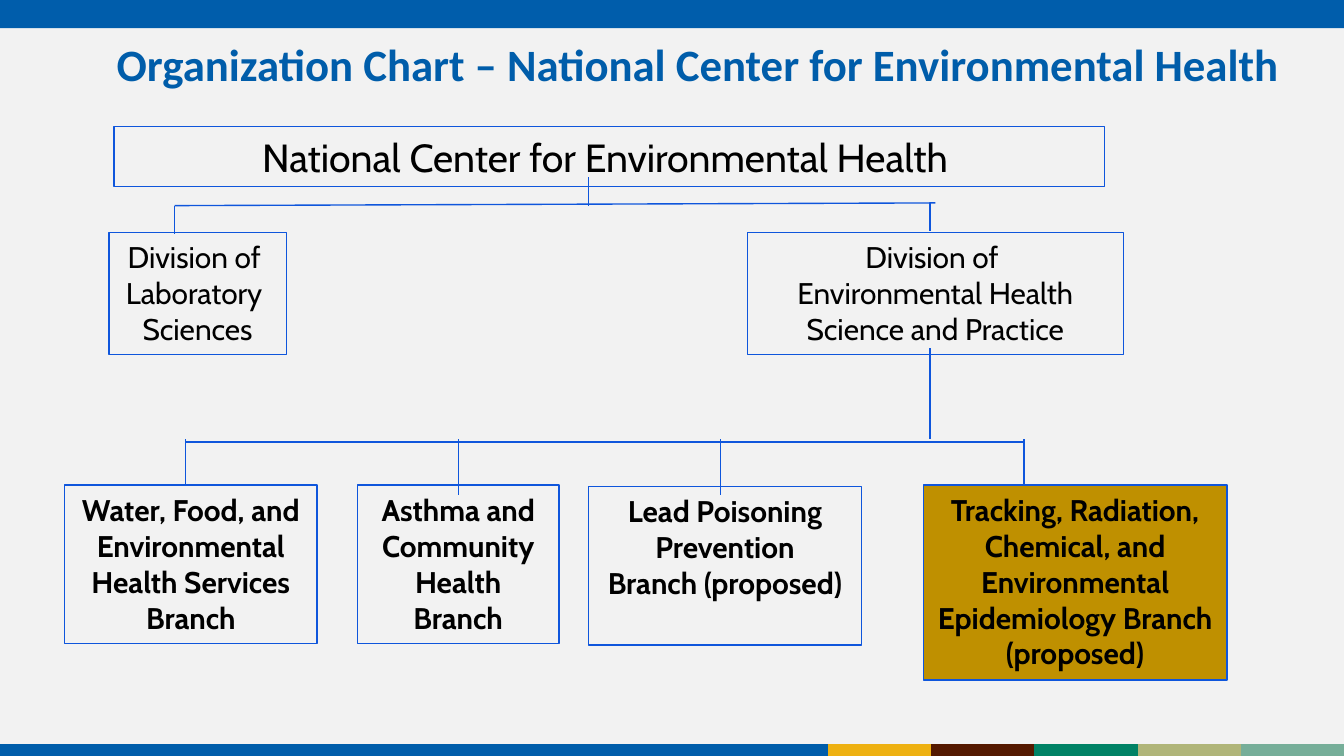
from dataclasses import dataclass

from lxml import etree
from pptx import Presentation
from pptx.dml.color import RGBColor
from pptx.enum.shapes import MSO_CONNECTOR, MSO_SHAPE
from pptx.enum.text import MSO_ANCHOR, MSO_AUTO_SIZE, PP_ALIGN
from pptx.oxml.ns import qn
from pptx.slide import Slide
from pptx.util import Inches, Pt

RECTANGLE = MSO_SHAPE.RECTANGLE
STRAIGHT = MSO_CONNECTOR.STRAIGHT
TOP, MIDDLE = MSO_ANCHOR.TOP, MSO_ANCHOR.MIDDLE
GROW = MSO_AUTO_SIZE.SHAPE_TO_FIT_TEXT
CENTER = PP_ALIGN.CENTER

SLIDE_WIDTH = 10
SLIDE_HEIGHT = SLIDE_WIDTH * 9 / 16

COLORS = {
    "background": "F2F2F2",
    "banner": "005DAB",
    "title": "005DAA",
    "outline": "0F56DC",
    "highlight": "BF9000",
    "text": "000000",
    "gold": "EEB111",
    "maroon": "541900",
    "green": "008265",
    "olive": "B0B579",
    "teal": "76AE99",
}
STRIPES = ("gold", "maroon", "green", "olive", "teal")
STRIPE_START, STRIPE_Y = 6.16, 5.59
STRIPE_WIDTH = (SLIDE_WIDTH - STRIPE_START) / len(STRIPES)


@dataclass
class Unit:
    left: float
    top: float
    width: float
    height: float
    paragraphs: tuple[str, ...]
    size: float = 16
    bold: bool = False
    fill: str | None = None
    wrap: bool = True


@dataclass
class Link:
    x1: float
    y1: float
    x2: float
    y2: float


UNITS = (
    Unit(0.48, 3.61, 1.88, 1.18,
         ("Water, Food, and Environmental Health Services Branch",), bold=True),
    Unit(2.66, 3.61, 1.5, 1.18,
         ("Asthma and Community Health Branch",), bold=True),
    Unit(4.38, 3.62, 2.03, 1.18,
         ("Lead Poisoning Prevention", "Branch (proposed)"), bold=True),
    Unit(6.87, 3.61, 2.26, 1.45,
         ("Tracking, Radiation, Chemical, and Environmental "
          "Epidemiology Branch (proposed)",), bold=True, fill="highlight"),
    Unit(0.85, 0.94, 7.37, 0.45,
         ("National Center for Environmental Health ",), size=21),
    Unit(0.81, 1.73, 1.32, 0.91,
         ("Division of ", "Laboratory ", "Sciences"), wrap=False),
    Unit(5.56, 1.73, 2.8, 0.91,
         ("Division of ", "Environmental Health Science and Practice")),
)

# Each branch drop runs from the lower rail at x to the given y.
BRANCH_DROPS = ((1.38, 3.61), (3.41, 3.68), (5.36, 3.68), (7.62, 3.61))
LINKS = (
    Link(4.38, 1.32, 4.38, 1.53),
    Link(1.3, 1.53, 6.96, 1.51),
    Link(6.92, 1.51, 6.92, 1.72),
    Link(1.3, 1.53, 1.3, 1.74),
    Link(6.92, 2.59, 6.92, 3.27),
    Link(1.38, 3.29, 7.62, 3.29),
    *(Link(x, 3.27, x, bottom) for x, bottom in BRANCH_DROPS),
)


def color(name: str) -> RGBColor:
    return RGBColor.from_string(COLORS[name])


def draw_line(slide: Slide, link: Link, line_color: str, weight: float) -> None:
    connector = slide.shapes.add_connector(
        STRAIGHT, Inches(link.x1), Inches(link.y1), Inches(link.x2), Inches(link.y2))
    connector.line.color.rgb = color(line_color)
    connector.line.width = Pt(weight)
    etree.SubElement(connector._element.spPr, qn("a:effectLst"))


def add_text(paragraph, text: str, font_name: str, size: float,
             text_color: str, bold: bool) -> None:
    run = paragraph.add_run()
    run.text = text
    run.font.name = font_name
    run.font.size = Pt(size)
    run.font.bold = bold
    run.font.color.rgb = color(text_color)


def draw_banner(slide: Slide) -> None:
    banner = slide.shapes.add_shape(
        RECTANGLE, 0, 0, Inches(SLIDE_WIDTH), Inches(0.21))
    banner.shadow.inherit = False
    banner.fill.solid()
    banner.fill.fore_color.rgb = color("banner")
    banner.line.fill.background()


def draw_footer(slide: Slide) -> None:
    draw_line(slide, Link(0, STRIPE_Y, STRIPE_START, STRIPE_Y), "title", 7.5)
    for index, stripe in enumerate(STRIPES):
        left = STRIPE_START + index * STRIPE_WIDTH
        draw_line(slide, Link(left, STRIPE_Y, left + STRIPE_WIDTH, STRIPE_Y),
                  stripe, 7.5)


def draw_title(slide: Slide) -> None:
    title = slide.shapes.add_textbox(Inches(0.77), 0, Inches(9), Inches(0.94))
    frame = title.text_frame
    frame.word_wrap = True
    frame.vertical_anchor = MIDDLE
    add_text(frame.paragraphs[0],
             "Organization Chart – National Center for Environmental Health",
             "Calibri", 24, "title", True)


def draw_unit(slide: Slide, unit: Unit) -> None:
    shape = slide.shapes.add_shape(
        RECTANGLE, Inches(unit.left), Inches(unit.top),
        Inches(unit.width), Inches(unit.height))
    shape.shadow.inherit = False
    if unit.fill:
        shape.fill.solid()
        shape.fill.fore_color.rgb = color(unit.fill)
    else:
        shape.fill.background()
    shape.line.color.rgb = color("outline")
    shape.line.width = Pt(0.75)
    frame = shape.text_frame
    frame.word_wrap = unit.wrap
    frame.auto_size = GROW
    frame.vertical_anchor = TOP
    for index, text in enumerate(unit.paragraphs):
        paragraph = frame.add_paragraph() if index else frame.paragraphs[0]
        paragraph.alignment = CENTER
        add_text(paragraph, text, "Cabin", unit.size, "text", unit.bold)


def main() -> None:
    presentation = Presentation()
    presentation.slide_width = Inches(SLIDE_WIDTH)
    presentation.slide_height = Inches(SLIDE_HEIGHT)
    slide = presentation.slides.add_slide(presentation.slide_layouts[6])
    slide.background.fill.solid()
    slide.background.fill.fore_color.rgb = color("background")
    draw_banner(slide)
    draw_footer(slide)
    draw_title(slide)
    for unit in UNITS:
        draw_unit(slide, unit)
    for link in LINKS:
        draw_line(slide, link, "outline", 0.75)
    presentation.save("out.pptx")


if __name__ == "__main__":
    main()
